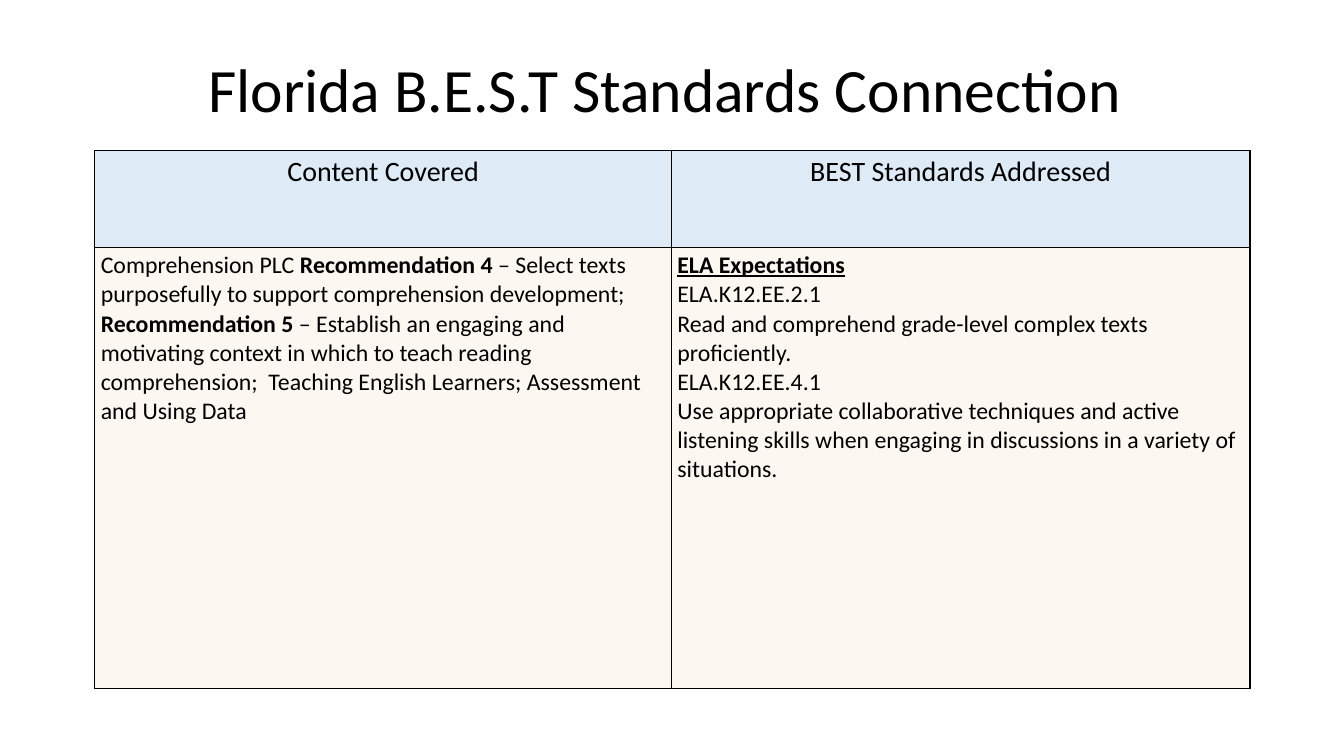
import pptx
import pptx.util
import pptx.dml.color
import pptx.enum.text
import pptx.oxml
import pptx.oxml.ns
from pptx.util import Cm, Pt

# Content: a cell is a list of paragraphs, a paragraph a list of (text, style)
TITLE = "Florida B.E.S.T Standards Connection "
HEADERS = ["Content Covered", "BEST Standards Addressed"]
CONTENT_COVERED = [
    [
        ("Comprehension PLC ", ""),
        ("Recommendation 4", "bold"),
        (" – Select texts purposefully to support comprehension development; ", ""),
        ("Recommendation 5", "bold"),
        (" – Establish an engaging and motivating context in which to teach "
         "reading comprehension;  Teaching English Learners; "
         "Assessment and Using Data ", ""),
    ],
]
STANDARDS = [
    [("ELA Expectations", "bold underline")],
    [("ELA.K12.EE.2.1", "")],
    [("Read and comprehend grade-level complex texts proficiently.", "")],
    [("ELA.K12.EE.4.1", "")],
    [("Use appropriate collaborative techniques and active listening skills "
      "when engaging in discussions in a variety of situations.", "")],
]
ROWS = [
    {"cells": [[[(header, "")]] for header in HEADERS], "height": Cm(2.44),
     "size": 20, "fill": "header", "align": pptx.enum.text.PP_ALIGN.CENTER},
    {"cells": [CONTENT_COVERED, STANDARDS], "height": Cm(11.12),
     "size": 17, "fill": "body", "align": pptx.enum.text.PP_ALIGN.LEFT},
]
COLUMN_WIDTHS = [Cm(14.53), Cm(14.58)]
COLORS = {"text": "000000", "border": "000000", "header": "DEEAF6", "body": "FCF7F1"}
FONT = "Calibri"


def color(name):
    return pptx.dml.color.RGBColor.from_string(COLORS[name])


def write(frame, paragraphs, size, align):
    for index, spans in enumerate(paragraphs):
        para = frame.paragraphs[0] if index == 0 else frame.add_paragraph()
        para.alignment = align
        for text, style in spans:
            span = para.add_run()
            span.text = text
            span.font.name = FONT
            span.font.size = Pt(size)
            span.font.bold = "bold" in style
            span.font.underline = "underline" in style
            span.font.color.rgb = color("text")


def add_borders(cell):
    properties = cell._tc.get_or_add_tcPr()
    for position, side in enumerate("LRTB"):
        line = pptx.oxml.parse_xml(
            f'<a:ln{side} {pptx.oxml.ns.nsdecls("a")} w="{Pt(1)}"><a:solidFill>'
            f'<a:srgbClr val="{COLORS["border"]}"/></a:solidFill></a:ln{side}>')
        properties.insert(position, line)


deck = pptx.Presentation()
deck.slide_width, deck.slide_height = Cm(33.87), Cm(19.05)
page = deck.slides.add_slide(deck.slide_layouts[6])

# Title
box = page.shapes.add_textbox(Cm(2.97), Cm(0.43), Cm(27.94), Cm(3.81))
box.text_frame.word_wrap = True
box.text_frame.vertical_anchor = pptx.enum.text.MSO_ANCHOR.MIDDLE
write(box.text_frame, [[(TITLE, "")]], 44, pptx.enum.text.PP_ALIGN.CENTER)
box.text_frame.paragraphs[0].line_spacing = 0.9

# Standards table
table = page.shapes.add_table(
    len(ROWS), len(COLUMN_WIDTHS), Cm(2.39), Cm(3.79),
    sum(COLUMN_WIDTHS), sum(row["height"] for row in ROWS)).table
for column, width in zip(table.columns, COLUMN_WIDTHS):
    column.width = width
for row_index, row in enumerate(ROWS):
    table.rows[row_index].height = row["height"]
    for column_index, paragraphs in enumerate(row["cells"]):
        cell = table.cell(row_index, column_index)
        cell.margin_left = cell.margin_right = Cm(0.15)
        cell.margin_top = cell.margin_bottom = Cm(0.1)
        cell.fill.solid()
        cell.fill.fore_color.rgb = color(row["fill"])
        add_borders(cell)
        write(cell.text_frame, paragraphs, row["size"], row["align"])

deck.save("out.pptx")
